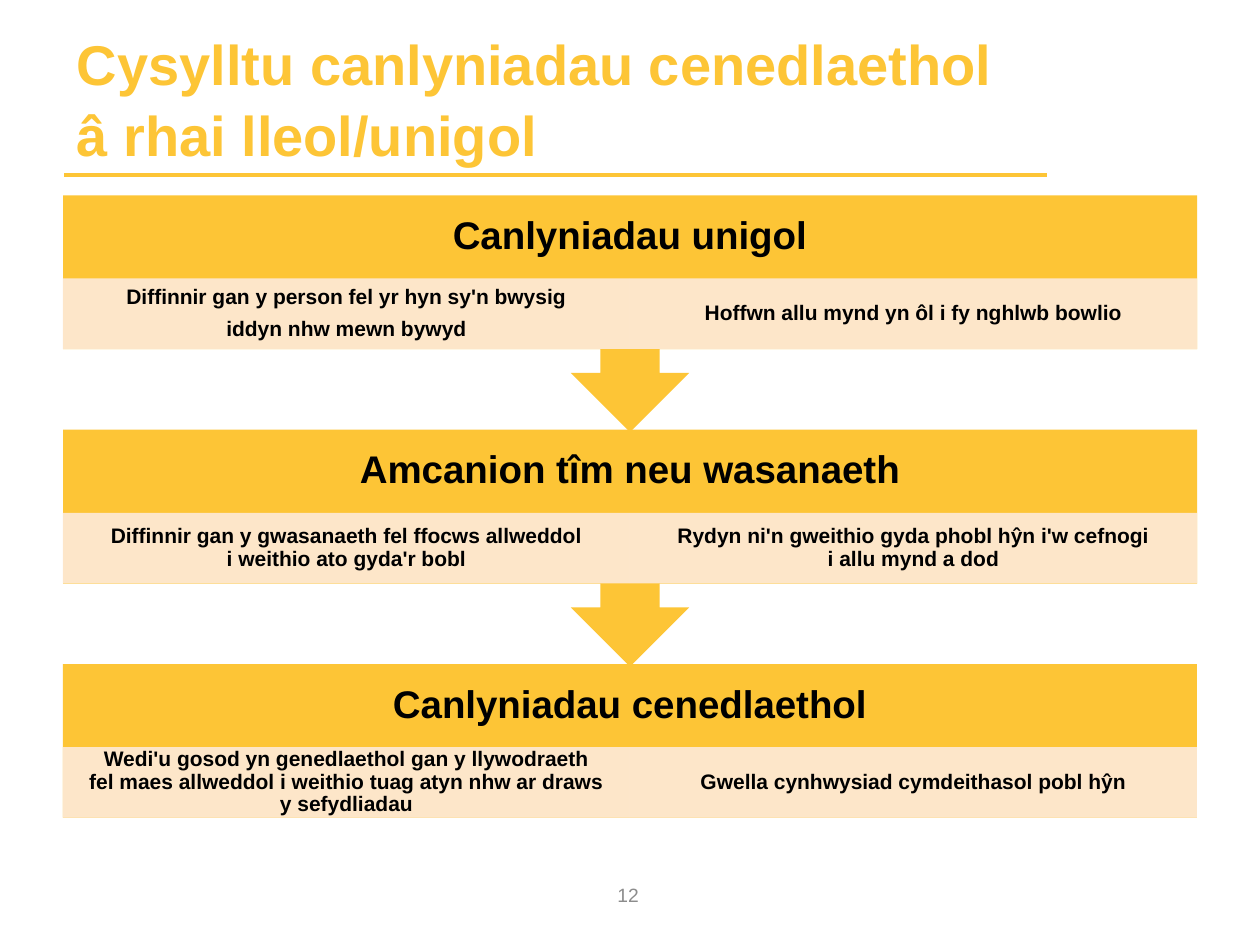
from dataclasses import dataclass

from lxml.etree import SubElement
from pptx import Presentation
from pptx.dml.color import RGBColor
from pptx.enum.shapes import MSO_CONNECTOR, MSO_SHAPE
from pptx.enum.text import MSO_ANCHOR, MSO_AUTO_SIZE, PP_ALIGN
from pptx.oxml.ns import qn
from pptx.util import Inches, Pt


@dataclass(frozen=True)
class Theme:
    font: str = "Arial"
    gold: RGBColor = RGBColor(0xFD, 0xC5, 0x36)
    cream: RGBColor = RGBColor(0xFD, 0xEA, 0xDA)
    black: RGBColor = RGBColor(0, 0, 0)
    grey: RGBColor = RGBColor(0x8C, 0x8C, 0x8C)
    title_size: int = 32
    heading_size: int = 22
    body_size: int = 12
    number_size: int = 11


@dataclass(frozen=True)
class Level:
    heading: str
    definition: tuple[str, ...]  # one entry per paragraph, "\v" breaks a line
    example: tuple[str, ...]
    has_arrow: bool = True


THEME = Theme()
LEFT, TOP, WIDTH, PITCH = 0.5, 1.55, 9, 1.86
BLOCK_H, CALLOUT_H, HEADING_H, CELL_H = 1.22, 1.88, 0.66, 0.56

LEVELS = [
    Level("Canlyniadau unigol",
          ("Diffinnir gan y person fel yr hyn sy'n bwysig", "iddyn nhw mewn bywyd"),
          ("Hoffwn allu mynd yn ôl i fy nghlwb bowlio",)),
    Level("Amcanion tîm neu wasanaeth",
          ("Diffinnir gan y gwasanaeth fel ffocws allweddol\vi weithio ato gyda'r bobl",),
          ("Rydyn ni'n gweithio gyda phobl hŷn i'w cefnogi\vi allu mynd a dod",)),
    Level("Canlyniadau cenedlaethol",
          ("Wedi'u gosod yn genedlaethol gan y llywodraeth\v"
           "fel maes allweddol i weithio tuag atyn nhw ar draws\vy sefydliadau",),
          ("Gwella cynhwysiad cymdeithasol pobl hŷn",),
          has_arrow=False),
]


def write(sp, paragraphs: tuple[str, ...], size: int, color: RGBColor, *,
          bold: bool = True, align=PP_ALIGN.CENTER, anchor=MSO_ANCHOR.MIDDLE,
          spacing: float = 0.9, margins: tuple[float, float] = (0.1, 0.05)) -> None:
    """Fill a shape with formatted paragraphs; margins are side, then top/bottom."""
    tf = sp.text_frame
    side, end = (Inches(m) for m in margins)
    frame_format = {"word_wrap": True, "auto_size": MSO_AUTO_SIZE.NONE,
                    "vertical_anchor": anchor, "margin_left": side,
                    "margin_right": side, "margin_top": end, "margin_bottom": end}
    for name, value in frame_format.items():
        setattr(tf, name, value)
    for i, text in enumerate(paragraphs):
        p = tf.add_paragraph() if i else tf.paragraphs[0]
        p.text = text
        p.alignment = align
        p.line_spacing = spacing
        if i < len(paragraphs) - 1:
            p.space_after = Pt(5)
        for r in p.runs:
            font_format = {"name": THEME.font, "size": Pt(size), "bold": bold}
            for name, value in font_format.items():
                setattr(r.font, name, value)
            r.font.color.rgb = color


def add_filled(slide, kind, box: tuple[float, ...], color: RGBColor):
    sp = slide.shapes.add_shape(kind, *map(Inches, box))
    sp.shadow.inherit = False
    sp.fill.solid()
    sp.fill.fore_color.rgb = color
    sp.line.fill.background()
    return sp


def add_cell(slide, box: tuple[float, ...], paragraphs: tuple[str, ...]) -> None:
    """Draw a pale cell that lets a tenth of the gold behind it through."""
    sp = add_filled(slide, MSO_SHAPE.RECTANGLE, box, THEME.cream)
    srgb = sp.fill._xPr.find(qn("a:solidFill")).find(qn("a:srgbClr"))
    SubElement(srgb, qn("a:alpha"), val="90000")
    write(sp, paragraphs, THEME.body_size, THEME.black, margins=(0.09, 0.02))


def add_level(slide, level: Level, top: float) -> None:
    if level.has_arrow:
        sp = add_filled(slide, MSO_SHAPE.UP_ARROW_CALLOUT,
                        (LEFT, top, WIDTH, CALLOUT_H), THEME.gold)
        sp.rotation = 180
    else:
        add_filled(slide, MSO_SHAPE.RECTANGLE, (LEFT, top, WIDTH, BLOCK_H), THEME.gold)
    heading = slide.shapes.add_textbox(*map(Inches, (LEFT, top, WIDTH, HEADING_H)))
    write(heading, (level.heading,), THEME.heading_size, THEME.black, margins=(0.17, 0.17))
    cell_w = WIDTH / 2
    for col, paragraphs in enumerate((level.definition, level.example)):
        add_cell(slide, (LEFT + col * cell_w, top + HEADING_H, cell_w, CELL_H), paragraphs)


def add_title(slide, text: str) -> None:
    title = slide.shapes.title
    place = {"left": 0.51, "top": 0.29, "width": 7.8, "height": 1.09}
    for name, value in place.items():
        setattr(title, name, Inches(value))
    write(title, (text,), THEME.title_size, THEME.gold, align=PP_ALIGN.LEFT,
          anchor=MSO_ANCHOR.BOTTOM, spacing=1.05)
    rule = slide.shapes.add_connector(MSO_CONNECTOR.STRAIGHT,
                                      *map(Inches, (0.51, 1.39, 8.31, 1.39)))
    rule.line.color.rgb = THEME.gold
    rule.line.width = Pt(2)
    SubElement(rule._element.spPr, qn("a:effectLst"))


def main() -> None:
    prs = Presentation()
    prs.slide_width, prs.slide_height = Inches(10), Inches(7.5)
    slide = prs.slides.add_slide(prs.slide_layouts[5])
    add_title(slide, "Cysylltu canlyniadau cenedlaethol â rhai lleol/unigol")
    # Bottom level first, so that each arrow tip lies over the block below it
    for row, level in reversed(list(enumerate(LEVELS))):
        add_level(slide, level, TOP + row * PITCH)
    number = slide.shapes.add_textbox(*map(Inches, (3.82, 6.9, 2.33, 0.4)))
    write(number, ("12",), THEME.number_size, THEME.grey, bold=False, spacing=1.0)
    prs.save("out.pptx")


if __name__ == "__main__":
    main()
